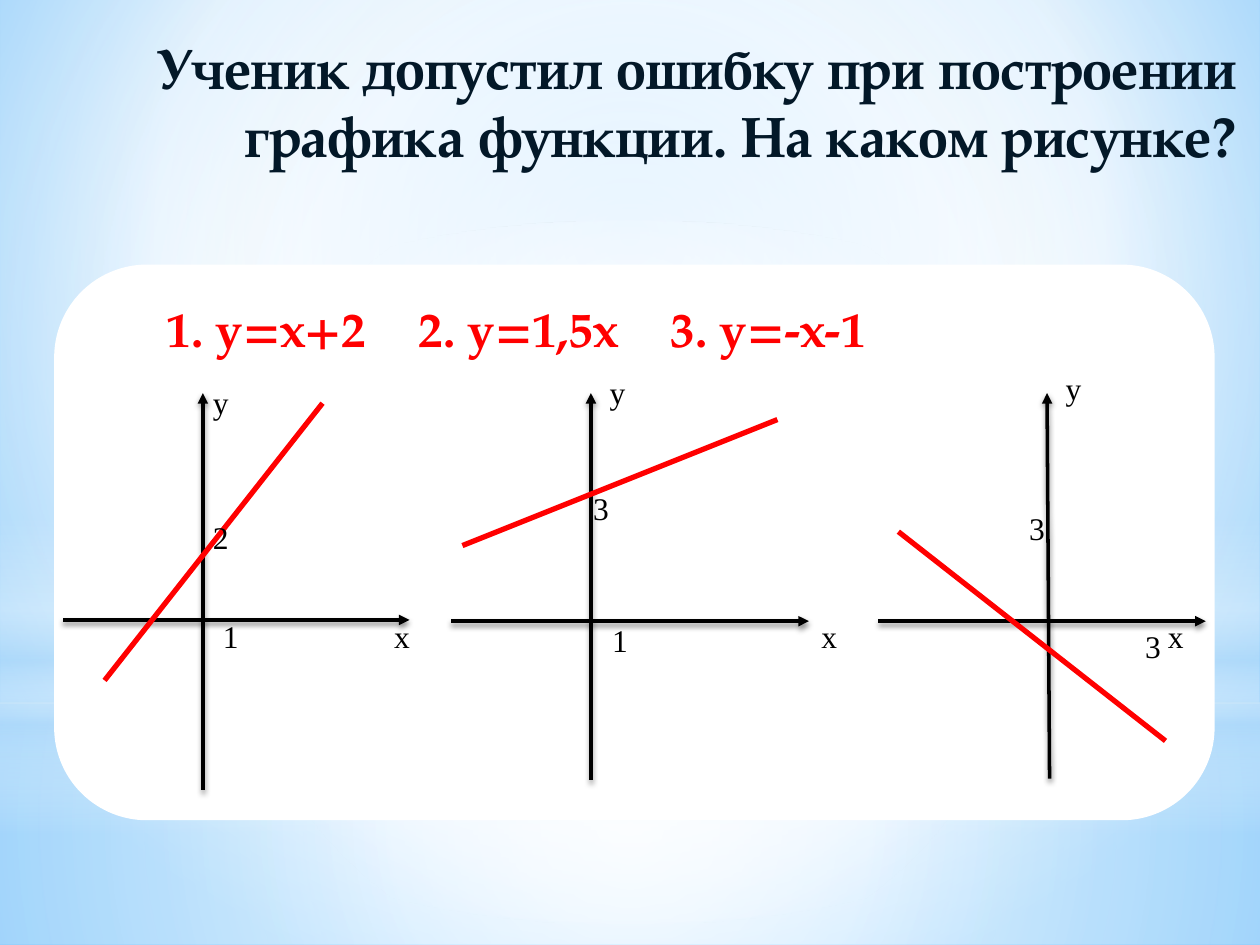
from lxml import etree
from pptx import Presentation
from pptx import util as u
from pptx.dml.color import RGBColor
from pptx.enum import shapes, text
from pptx.oxml import parse_xml
from pptx.oxml.ns import nsdecls, qn

COLORS = {"title": "031828", "red": "FF0000", "black": "000000", "white": "FFFFFF",
          "sky": "B4DCFA", "pale": "9ED5FF", "deep": "5BB9FF"}
SERIF, PLAIN = "TeX Gyre Pagella", "Times New Roman"
TITLE = "Ученик допустил ошибку при построении графика функции. На каком рисунке?"
FORMULAS = ["1. y=х+2", "2. y=1,5х", "3. y=-х-1"]
FORMULA_TABS = [2.45, 5.49]

# Axes and graph: start x, start y, end x, end y. Labels: text, left, top.
GRAPHS = [
    {"axes": [(1.61, 6.27, 1.61, 3.12), (0.5, 4.92, 3.25, 4.92)],
     "graph": (0.83, 5.4, 2.56, 3.2),
     "labels": [("x", 3.03, 4.85), ("y", 1.59, 2.99), ("2", 1.59, 4.06), ("1", 1.67, 4.85)]},
    {"axes": [(4.69, 6.19, 4.69, 3.12), (3.58, 4.93, 6.42, 4.93)],
     "graph": (3.67, 4.33, 6.17, 3.33),
     "labels": [("x", 6.42, 4.85), ("y", 4.74, 2.91), ("3", 4.61, 3.83), ("1", 4.76, 4.88)]},
    {"axes": [(8.33, 6.18, 8.31, 3.12), (6.97, 4.93, 9.57, 4.93)],
     "graph": (7.13, 4.22, 9.25, 5.88),
     "labels": [("x", 9.17, 4.85), ("y", 8.36, 2.88), ("3", 8.07, 3.99), ("3", 8.99, 4.93)]},
]

CENTER = (50, 50, 50, 50)
# Gradient stops: position, colour, opacity. A focus of None means top to bottom.
BACKGROUND = [(0, "pale", 100), (60, "white", 100), (100, "deep", 100)]
BACKDROPS = [
    ("RECTANGLE", (0, 5.58, 10, 1.92), CENTER,
     [(0, "white", 91), (37, "white", 76), (100, "sky", 79)]),
    ("RECTANGLE", (0, 0, 10, 5.58), CENTER,
     [(0, "white", 89), (48, "white", 62), (100, "sky", 79)]),
    ("RECTANGLE", (0, 4.12, 10, 2.5), None,
     [(0, "white", 0), (29, "white", 30), (45, "sky", 40), (55, "white", 26),
      (65, "sky", 60), (100, "white", 0)]),
    ("OVAL", (0, 1.75, 10, 5.58), CENTER, [(0, "white", 100), (56, "white", 0)]),
]


def color(name):
    return RGBColor.from_string(COLORS[name])


def inches(values):
    return [u.Inches(value) for value in values]


def set_gradient(fill, stops, focus):
    """Give a fill gradient stops with opacity, spreading from a focus rectangle."""
    fill.gradient()
    gradient = fill._xPr.find(qn("a:gradFill"))
    stop_xml = "".join(
        f'<a:gs pos="{place * 1000}"><a:srgbClr val="{COLORS[name]}">'
        f'<a:alpha val="{opacity * 1000}"/></a:srgbClr></a:gs>'
        for place, name, opacity in stops)
    if focus:
        edges = " ".join(f'{side}="{share * 1000}"' for side, share in zip("ltrb", focus))
        direction = f'<a:path path="circle"><a:fillToRect {edges}/></a:path>'
    else:
        direction = '<a:lin ang="5400000" scaled="0"/>'
    gradient.getparent().replace(gradient, parse_xml(
        f'<a:gradFill {nsdecls("a")} rotWithShape="1"><a:gsLst>{stop_xml}</a:gsLst>'
        f'{direction}</a:gradFill>'))


def write(shape, words, size, font, ink, bold=False, align=text.PP_ALIGN.LEFT):
    frame = shape.text_frame
    frame.word_wrap = True
    frame.auto_size = text.MSO_AUTO_SIZE.NONE
    frame.vertical_anchor = text.MSO_ANCHOR.TOP
    para = frame.paragraphs[0]
    para.alignment = align
    span = para.add_run()
    span.text = words
    span.font.size, span.font.name, span.font.bold = u.Pt(size), font, bold
    span.font.color.rgb = color(ink)
    return para


def place(shape, box):
    shape.left, shape.top, shape.width, shape.height = inches(box)


def add_line(slide, ends, ink, width, axis=False):
    """Draw a line; an axis also gets an arrowhead and a soft shadow."""
    line = slide.shapes.add_connector(shapes.MSO_CONNECTOR.STRAIGHT, *inches(ends))
    line.line.color.rgb = color(ink)
    line.line.width = u.Pt(width)
    effects = etree.SubElement(line._element.spPr, qn("a:effectLst"))
    if axis:
        etree.SubElement(line.line._get_or_add_ln(), qn("a:tailEnd"), type="triangle")
        shadow = etree.SubElement(effects, qn("a:outerShdw"), blurRad=str(u.Pt(3.1)),
                                  dist=str(u.Pt(1.8)), dir="5400000", rotWithShape="0")
        tint = etree.SubElement(shadow, qn("a:srgbClr"), val=COLORS["black"])
        etree.SubElement(tint, qn("a:alpha"), val="45000")


def add_backdrops(slide):
    set_gradient(slide.background.fill, BACKGROUND, (20, 10, 20, 60))
    for kind, box, focus, stops in BACKDROPS:
        shape = slide.shapes.add_shape(getattr(shapes.MSO_SHAPE, kind), *inches(box))
        shape.shadow.inherit = False
        shape.line.fill.background()
        set_gradient(shape.fill, stops, focus)


def fill_placeholders(slide):
    title, panel = slide.placeholders
    for shape in (title, panel):
        slide.shapes._spTree.append(shape._element)  # in front of the backdrops
    place(title, (0.23, 0.21, 9.69, 1.86))
    write(title, TITLE, 32.4, SERIF, "title", bold=True, align=text.PP_ALIGN.RIGHT)

    place(panel, (0.43, 2.1, 9.21, 4.41))
    panel._element.spPr.append(parse_xml(
        f'<a:prstGeom {nsdecls("a")} prst="roundRect"><a:avLst>'
        '<a:gd name="adj" fmla="val 16700"/></a:avLst></a:prstGeom>'))
    panel.fill.solid()
    panel.fill.fore_color.rgb = color("white")
    para = write(panel, "\t".join(FORMULAS), 28, SERIF, "red", bold=True)
    panel.text_frame.margin_left = u.Inches(0.68)
    para.space_before = u.Pt(0)
    props = para._p.get_or_add_pPr()
    props.set("marL", "0")
    props.set("indent", "0")
    etree.SubElement(props, qn("a:buNone"))
    tabs = etree.SubElement(props, qn("a:tabLst"))
    for stop in FORMULA_TABS:
        etree.SubElement(tabs, qn("a:tab"), pos=str(u.Inches(stop)), algn="l")


def main():
    deck = Presentation()
    deck.slide_width, deck.slide_height = u.Inches(10), u.Inches(7.5)
    slide = deck.slides.add_slide(deck.slide_layouts[1])
    add_backdrops(slide)
    fill_placeholders(slide)
    for graph in GRAPHS:
        for axis in graph["axes"]:
            add_line(slide, axis, "black", 2, axis=True)
    for graph in GRAPHS:
        add_line(slide, graph["graph"], "red", 3)
        for words, left, top in graph["labels"]:
            box = slide.shapes.add_textbox(*inches((left, top, 0.35, 0.4)))
            write(box, words, 18, PLAIN, "black")
    deck.save("out.pptx")


if __name__ == "__main__":
    main()
